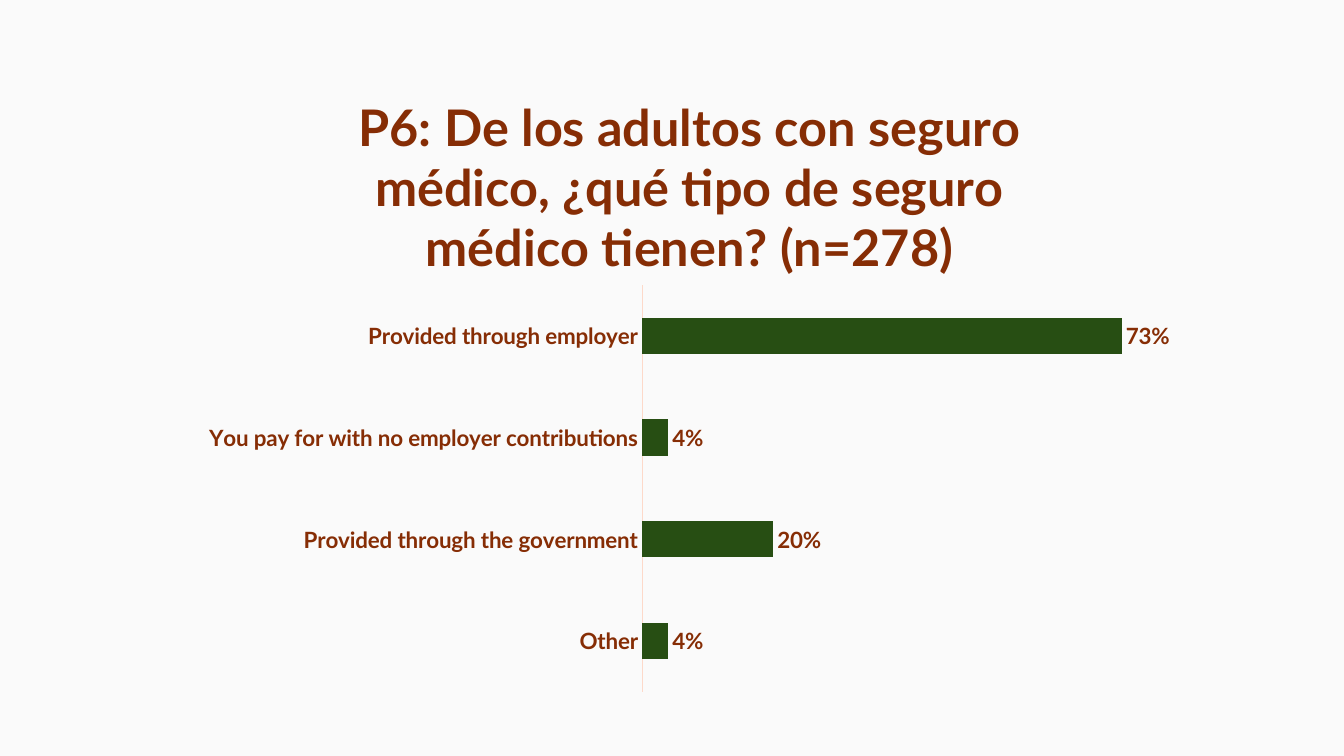
import pptx
import pptx.chart.data
import pptx.dml.color
import pptx.enum.chart
import pptx.oxml
import pptx.oxml.ns
import pptx.util

EMU_PER_PX = 914400 / 100.8
COLORS = {"background": "FAFAFA", "text": "862D05", "axis": "FDD9C9", "bar": "274E13"}
FONT = "Lato"

QUESTION = "P6: De los adultos con seguro médico, ¿qué tipo de seguro médico tienen? (n=278)"
COVERAGE = {
    "Provided through employer": 0.73,
    "You pay for with no employer contributions": 0.04,
    "Provided through the government": 0.2,
    "Other": 0.04,
}


def px(length):
    return round(length * EMU_PER_PX)


def color(name):
    return pptx.dml.color.RGBColor.from_string(COLORS[name])


class SurveySlide:
    def __init__(self, deck):
        self.slide = deck.slides.add_slide(deck.slide_layouts[6])
        background = self.slide.background.fill
        background.solid()
        background.fore_color.rgb = color("background")

    def style_font(self, font, size):
        font.name = FONT
        font.size = pptx.util.Pt(size)
        font.bold = True
        font.color.rgb = color("text")

    def add_bar_chart(self, title, shares, frame, plot):
        """Draw a horizontal bar chart; frame and plot are (left, top, width, height)."""
        chart_data = pptx.chart.data.CategoryChartData(number_format="0%")
        chart_data.categories = list(shares)
        chart_data.add_series("Series 1", list(shares.values()))
        chart = self.slide.shapes.add_chart(
            pptx.enum.chart.XL_CHART_TYPE.BAR_CLUSTERED,
            *(px(length) for length in frame), chart_data).chart
        chart.has_legend = False
        chart.font.name = "Arial"
        chart.font.size = pptx.util.Pt(10)
        chart.font.color.rgb = color("text")

        self.add_chart_title(chart, title)
        self.style_axes(chart)
        self.style_bars(chart.plots[0])
        self.place_plot(chart, frame, plot)

    def add_chart_title(self, chart, title):
        chart.has_title = True
        chart.chart_title.include_in_layout = False
        heading = chart.chart_title.text_frame.paragraphs[0]
        self.style_font(heading.font, 36)
        run = heading.add_run()
        run.text = title
        self.style_font(run.font, 36)

    def style_axes(self, chart):
        answers = chart.category_axis
        answers.reverse_order = True
        answers.has_major_gridlines = False
        answers.major_tick_mark = pptx.enum.chart.XL_TICK_MARK.NONE
        answers.minor_tick_mark = pptx.enum.chart.XL_TICK_MARK.NONE
        answers.format.line.color.rgb = color("axis")
        answers.format.line.width = pptx.util.Pt(0.75)
        self.style_font(answers.tick_labels.font, 16)

        percent = chart.value_axis
        percent.minimum_scale = 0
        percent.maximum_scale = 0.8
        percent.has_major_gridlines = False
        percent.tick_labels.number_format = "0%"
        percent.tick_labels.number_format_is_linked = False
        percent.visible = False

    def style_bars(self, bars):
        bars.gap_width = 182
        bars.vary_by_categories = False
        fill = bars.series[0].format.fill
        fill.solid()
        fill.fore_color.rgb = color("bar")
        labels = bars.series[0].data_labels
        labels.show_value = True
        labels.number_format = "0%"
        labels.number_format_is_linked = False
        labels.position = pptx.enum.chart.XL_LABEL_POSITION.OUTSIDE_END
        self.style_font(labels.font, 16)

    def place_plot(self, chart, frame, plot):
        """Fix the inner plot area, given in slide px, as fractions of the chart."""
        left, top, width, height = frame
        fractions = {
            "x": (plot[0] - left) / width,
            "y": (plot[1] - top) / height,
            "w": plot[2] / width,
            "h": plot[3] / height,
        }
        modes = "".join(f'<c:{side}Mode val="edge"/>' for side in "xy")
        sizes = "".join(f'<c:{key} val="{value:.4f}"/>' for key, value in fractions.items())
        layout = pptx.oxml.parse_xml(
            f'<c:layout {pptx.oxml.ns.nsdecls("c")}><c:manualLayout>'
            f'<c:layoutTarget val="inner"/>{modes}{sizes}</c:manualLayout></c:layout>')
        plot_area = chart.element.find(".//" + pptx.oxml.ns.qn("c:plotArea"))
        for previous in plot_area.findall(pptx.oxml.ns.qn("c:layout")):
            plot_area.remove(previous)
        plot_area.insert(0, layout)


def main():
    deck = pptx.Presentation()
    deck.slide_width, deck.slide_height = px(1344), px(756)
    survey = SurveySlide(deck)
    survey.add_bar_chart(QUESTION, COVERAGE,
                         frame=(190, 64, 999, 641), plot=(642, 285, 526, 407))
    deck.save("out.pptx")


if __name__ == "__main__":
    main()
